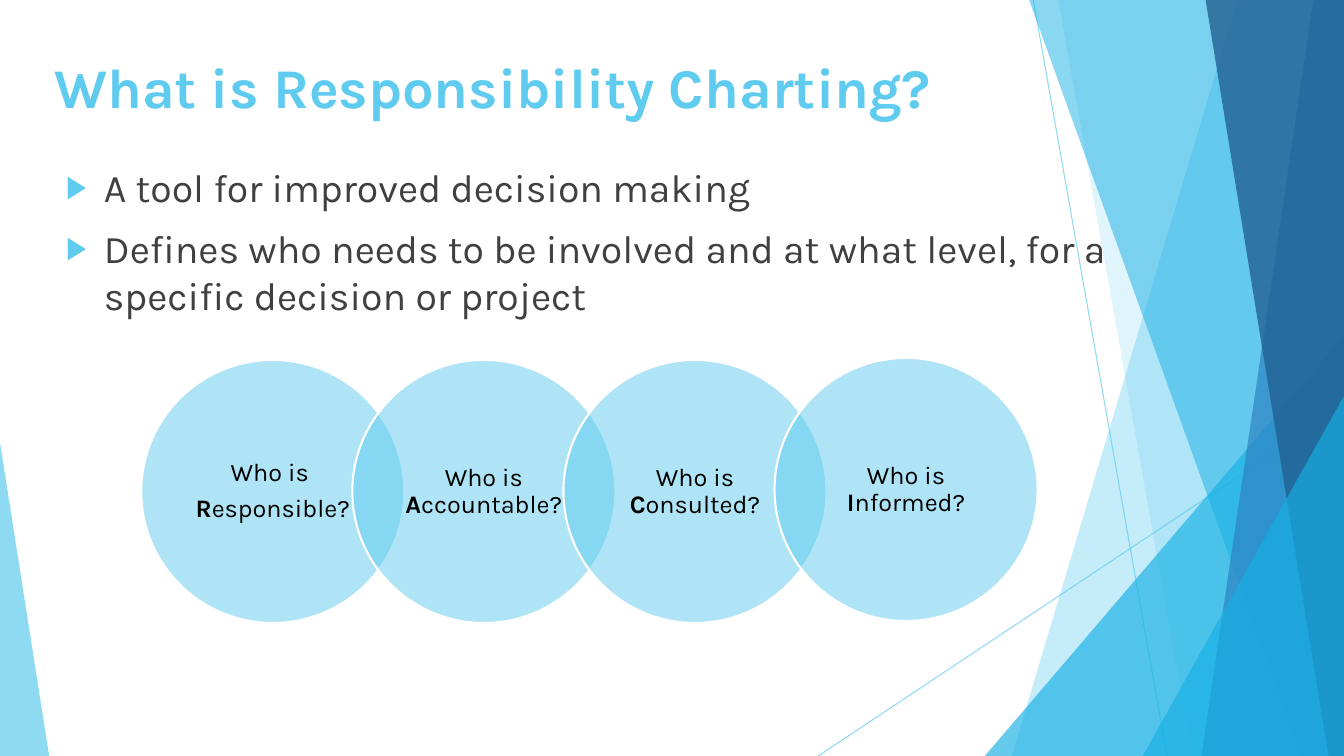
from dataclasses import dataclass
from typing import Any

from lxml.etree import SubElement
from pptx import Presentation
from pptx.dml.color import RGBColor as RGB
from pptx.enum.shapes import MSO_CONNECTOR as Conn, MSO_SHAPE as Shape
from pptx.enum.text import MSO_ANCHOR as Anchor, PP_ALIGN as Align
from pptx.oxml.ns import qn
from pptx.util import Cm, Pt


@dataclass(frozen=True)
class Theme:
    font: str = "Karla"
    sky: str = "5FCBEF"
    cyan: str = "17B0E4"
    blue: str = "2E83C3"
    navy: str = "226292"
    text: str = "404040"
    black: str = "000000"
    white: str = "FFFFFF"
    title_size: int = 40
    body_size: int = 28
    label_size: int = 18


@dataclass(frozen=True)
class Ray:
    start: tuple[float, float]
    end: tuple[float, float]


@dataclass(frozen=True)
class Band:
    """Strip from a slanted left edge to the right side of the slide."""
    top_x: float
    bottom_x: float
    color: str
    alpha: int


@dataclass(frozen=True)
class Wedge:
    """Triangle standing on the bottom of the slide."""
    left: float
    top: float
    width: float
    apex: float
    color: str
    alpha: int


@dataclass(frozen=True)
class Role:
    lines: tuple[tuple[str, ...], ...]  # runs of each paragraph
    top: float = 9.07


T = Theme()
WIDTH, HEIGHT = 33.87, 19.05
BAND_TOP = -0.02
CIRCLE_LEFT, CIRCLE_STEP, CIRCLE_SIZE, LABEL_INSET = 3.56, 5.32, 6.63, 0.97

RAYS = [Ray((26.04, 0), (29.41, HEIGHT)), Ray((WIDTH, 10.24), (20.62, HEIGHT))]
DECOR = [
    Band(31.19, 25.5, T.sky, 36),
    Band(26.67, 30.05, T.sky, 20),
    Wedge(24.82, 8.46, 9.05, 1, T.cyan, 66),
    Band(25.93, 32.79, T.cyan, 50),
    Band(33.1, 30.28, T.blue, 70),
    Band(30.38, 33.48, T.navy, 80),
    Wedge(28.8, 9.98, 5.07, 1, T.cyan, 66),
    Wedge(0, 11.15, 1.24, 0, T.sky, 70),
]
BULLETS = [
    "A tool for improved decision making",
    "Defines who needs to be involved and at what level, for a specific decision or project",
]
ROLES = [
    Role((("Who is ",), ("R", "esponsible?"))),
    Role((("Who is ", "A", "ccountable?"),)),
    Role((("Who is ", "C", "onsulted?"),)),
    Role((("Who is ", "I", "nformed?"),), top=9.02),
]
LABEL_FRAME = {
    "vertical_anchor": Anchor.MIDDLE,
    "margin_left": Cm(0.36), "margin_right": Cm(0.36),
    "margin_top": Cm(0.08), "margin_bottom": Cm(0.08),
}
LABEL_PARAGRAPH = {"alignment": Align.CENTER, "line_spacing": 0.9, "space_after": Pt(6.3)}


def apply(target: Any, values: dict[str, Any]) -> None:
    for name, value in values.items():
        setattr(target, name, value)


def set_alpha(sp: Any, percent: int) -> None:
    color = sp._element.spPr.find(".//" + qn("a:srgbClr"))
    SubElement(color, qn("a:alpha"), val=str(percent * 1000))


def fill_shape(sp: Any, color: str, alpha: int) -> None:
    sp.shadow.inherit = False
    sp.fill.solid()
    sp.fill.fore_color.rgb = RGB.from_string(color)
    sp.line.fill.background()
    set_alpha(sp, alpha)


def add_ray(shapes: Any, ray: Ray) -> None:
    line = shapes.add_connector(Conn.STRAIGHT, *map(Cm, ray.start + ray.end))
    line.line.color.rgb = RGB.from_string(T.sky)
    line.line.width = Pt(0.75)
    set_alpha(line, 70)
    SubElement(line._element.spPr, qn("a:effectLst"))


def add_band(shapes: Any, band: Band) -> None:
    outline = shapes.build_freeform(Cm(band.top_x), Cm(BAND_TOP))
    corners = [(WIDTH, BAND_TOP), (WIDTH, HEIGHT), (band.bottom_x, HEIGHT)]
    outline.add_line_segments([(Cm(x), Cm(y)) for x, y in corners], close=True)
    fill_shape(outline.convert_to_shape(), band.color, band.alpha)


def add_wedge(shapes: Any, wedge: Wedge) -> None:
    box = (wedge.left, wedge.top, wedge.width, HEIGHT - wedge.top)
    sp = shapes.add_shape(Shape.ISOSCELES_TRIANGLE, *map(Cm, box))
    sp.adjustments[0] = wedge.apex
    fill_shape(sp, wedge.color, wedge.alpha)


def add_text_frame(shapes: Any, box: tuple[float, ...]) -> Any:
    tf = shapes.add_textbox(*map(Cm, box)).text_frame
    tf.word_wrap = True
    return tf


def add_paragraph(tf: Any, first: bool) -> Any:
    return tf.paragraphs[0] if first else tf.add_paragraph()


def add_run(p: Any, text: str, size: int, color: str, bold: bool = False) -> None:
    r = p.add_run()
    r.text = text
    apply(r.font, {"name": T.font, "size": Pt(size), "bold": bold})
    r.font.color.rgb = RGB.from_string(color)


def add_bullet(p: Any) -> None:
    pPr = p._p.get_or_add_pPr()
    pPr.set("marL", str(Cm(0.95)))
    pPr.set("indent", str(-Cm(0.95)))
    SubElement(SubElement(pPr, qn("a:buClr")), qn("a:srgbClr"), val=T.sky)
    SubElement(pPr, qn("a:buSzPct"), val="80000")
    SubElement(pPr, qn("a:buFont"), typeface="Arial")
    SubElement(pPr, qn("a:buChar"), char="▶")


def add_role(shapes: Any, index: int, role: Role) -> None:
    left = CIRCLE_LEFT + index * CIRCLE_STEP
    circle = shapes.add_shape(Shape.OVAL, Cm(left), Cm(role.top), Cm(CIRCLE_SIZE), Cm(CIRCLE_SIZE))
    fill_shape(circle, T.sky, 50)
    circle.line.color.rgb = RGB.from_string(T.white)
    circle.line.width = Pt(1.5)

    side = CIRCLE_SIZE - 2 * LABEL_INSET
    tf = add_text_frame(shapes, (left + LABEL_INSET, role.top + LABEL_INSET, side, side))
    apply(tf, LABEL_FRAME)
    for i, runs in enumerate(role.lines):
        p = add_paragraph(tf, i == 0)
        apply(p, LABEL_PARAGRAPH)
        for text in runs:
            add_run(p, text, T.label_size, T.black, bold=len(text) == 1)


def main() -> None:
    prs = Presentation()
    apply(prs, {"slide_width": Cm(WIDTH), "slide_height": Cm(HEIGHT)})
    shapes = prs.slides.add_slide(prs.slide_layouts[6]).shapes

    # Background decoration
    for ray in RAYS:
        add_ray(shapes, ray)
    for part in DECOR:
        if isinstance(part, Band):
            add_band(shapes, part)
        else:
            add_wedge(shapes, part)

    # Title
    title = add_text_frame(shapes, (1.12, 1.19, 23.88, 3.66))
    add_run(title.paragraphs[0], "What is Responsibility Charting?", T.title_size, T.sky, bold=True)

    # Bullet list
    body = add_text_frame(shapes, (1.42, 3.99, 26.82, 10.77))
    for i, text in enumerate(BULLETS):
        p = add_paragraph(body, i == 0)
        p.space_before = Pt(10)
        add_bullet(p)
        add_run(p, text, T.body_size, T.text)

    # Overlapping role circles
    for i, role in enumerate(ROLES):
        add_role(shapes, i, role)

    prs.save("out.pptx")


if __name__ == "__main__":
    main()
